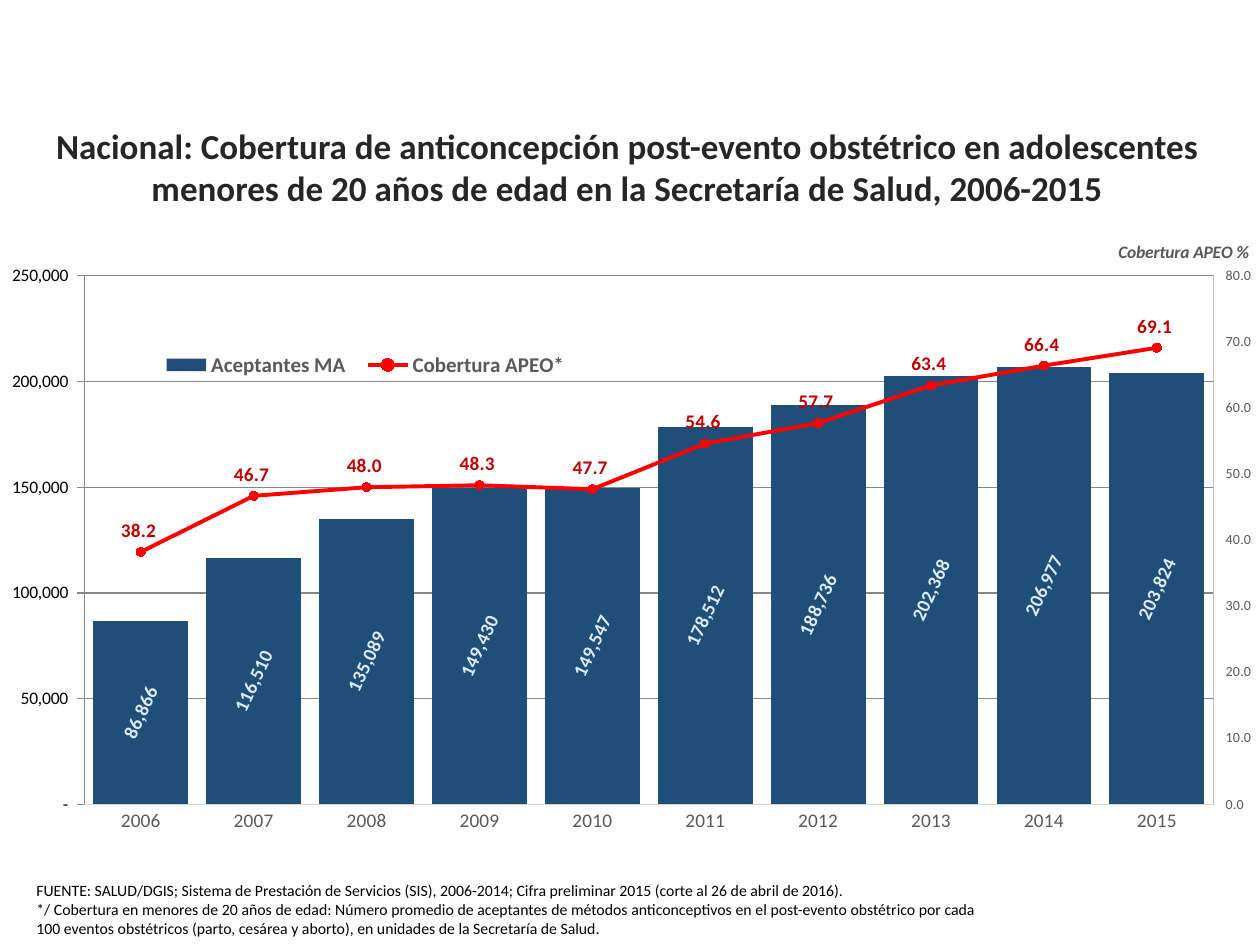
from pptx import Presentation
from pptx.chart.axis import ValueAxis
from pptx.chart.data import CategoryChartData
from pptx.dml.color import RGBColor
from pptx.enum.chart import (XL_CHART_TYPE, XL_LABEL_POSITION, XL_LEGEND_POSITION,
                             XL_MARKER_STYLE, XL_TICK_MARK)
from pptx.enum.text import MSO_ANCHOR, MSO_AUTO_SIZE, PP_ALIGN
from pptx.oxml import parse_xml
from pptx.oxml.ns import nsdecls, qn
from pptx.util import Pt

FONT = "Calibri"
COLORS = {"title": "262626", "note": "000000", "gray": "595959", "axis": "D9D9D9",
          "frame": "BFBFBF", "bar": "1F4E79", "bar_label": "DEEBF7",
          "line": "FF0000", "line_label": "C00000"}
YEARS = [str(year) for year in range(2006, 2016)]
ACCEPTERS = [86866, 116510, 135089, 149430, 149547, 178512, 188736, 202368, 206977, 203824]
COVERAGE = [38.2, 46.7, 48.0, 48.3, 47.7, 54.6, 57.7, 63.4, 66.4, 69.1]
COUNT_FORMAT = '_(* #,##0_);_(* \\(#,##0\\);_(* "-"_);_(@_)'
PERCENT_FORMAT = "0.0_ ;\\-0.0\\ "
TITLE = ("Nacional: Cobertura de anticoncepción post-evento obstétrico en adolescentes "
         "menores de 20 años de edad en la Secretaría de Salud, 2006-2015")
NOTES = ("FUENTE: SALUD/DGIS; Sistema de Prestación de Servicios (SIS), 2006-2014; "
         "Cifra preliminar 2015 (corte al 26 de abril de 2016).\n"
         "*/ Cobertura en menores de 20 años de edad: Número promedio de aceptantes de métodos "
         "anticonceptivos en el post-evento obstétrico por cada 100 eventos obstétricos "
         "(parto, cesárea y aborto), en unidades de la Secretaría de Salud.")


def rgb(name):
    """Return the named palette color."""
    return RGBColor.from_string(COLORS[name])


def format_font(font, size, color, bold=False, italic=False):
    """Apply typeface, size, color and emphasis to a font."""
    font.name, font.size, font.bold, font.italic = FONT, Pt(size), bold, italic
    font.color.rgb = rgb(color)


def write_text(frame, text, align=PP_ALIGN.LEFT, **style):
    """Write text into a frame, one paragraph per line."""
    frame.text = text
    for paragraph in frame.paragraphs:
        paragraph.alignment = align
        for run in paragraph.runs:
            format_font(run.font, **style)


def place(shape, left, top, width, height):
    """Position a shape and let it grow with its text."""
    shape.left, shape.top, shape.width, shape.height = map(Pt, (left, top, width, height))
    shape.text_frame.word_wrap = True
    shape.text_frame.auto_size = MSO_AUTO_SIZE.SHAPE_TO_FIT_TEXT


def set_layout(element, x, y, width=None, height=None):
    """Give a chart part a manual layout in fractions of the chart."""
    for old in element.findall(qn("c:layout")):
        element.remove(old)
    target = '<c:layoutTarget val="inner"/>' if element.tag == qn("c:plotArea") else ""
    size = f'<c:w val="{width}"/><c:h val="{height}"/>' if width else ""
    layout = parse_xml(
        f'<c:layout {nsdecls("c")}><c:manualLayout>{target}<c:xMode val="edge"/>'
        f'<c:yMode val="edge"/><c:x val="{x}"/><c:y val="{y}"/>{size}'
        '</c:manualLayout></c:layout>')
    overlay = element.find(qn("c:overlay"))
    if overlay is None:
        element.insert(0, layout)
    else:
        overlay.addprevious(layout)


def move_to_second_axis(chart):
    """Turn the last column series into a line on a right-hand axis."""
    plot_area = chart.plots[0]._element.getparent()
    bar_chart = plot_area.find(qn("c:barChart"))
    series = bar_chart.findall(qn("c:ser"))[-1]
    for flag in series.findall(qn("c:invertIfNegative")):
        series.remove(flag)
    line_chart = parse_xml(
        f'<c:lineChart {nsdecls("c")}><c:grouping val="standard"/><c:varyColors val="0"/>'
        '<c:marker val="1"/><c:axId val="5001"/><c:axId val="5002"/></c:lineChart>')
    line_chart.insert(2, series)
    bar_chart.addnext(line_chart)
    last_axis = plot_area.find(qn("c:valAx"))
    axes = (("valAx", 5002, 5001, 0, "r", "max"), ("catAx", 5001, 5002, 1, "b", "autoZero"))
    for tag, own, other, deleted, side, crosses in axes:
        axis = parse_xml(
            f'<c:{tag} {nsdecls("c")}><c:axId val="{own}"/><c:scaling>'
            f'<c:orientation val="minMax"/></c:scaling><c:delete val="{deleted}"/>'
            f'<c:axPos val="{side}"/><c:majorTickMark val="out"/><c:minorTickMark val="none"/>'
            f'<c:tickLblPos val="nextTo"/><c:crossAx val="{other}"/>'
            f'<c:crosses val="{crosses}"/></c:{tag}>')
        last_axis.addnext(axis)
        last_axis = axis
    return ValueAxis(plot_area.findall(qn("c:valAx"))[1])


def format_value_axis(axis, title, position, maximum, unit, number_format, tick):
    """Set scale, labels and a horizontal title above a value axis."""
    axis.minimum_scale, axis.maximum_scale, axis.major_unit = 0, maximum, unit
    axis.has_major_gridlines = False
    axis.major_tick_mark = tick
    axis.tick_labels.number_format = number_format
    axis.tick_labels.number_format_is_linked = False
    format_font(axis.tick_labels.font, 8, "gray")
    axis.format.line.fill.background()
    frame = axis.axis_title.text_frame
    write_text(frame, title, size=10, color="gray", bold=True, italic=True)
    frame._txBody.find(qn("a:bodyPr")).set("rot", "0")
    set_layout(axis.axis_title._element, *position)


def label_series(series, color, number_format, position, rotation=0):
    """Show the values of a series as bold labels."""
    labels = series.data_labels
    labels.show_value = True
    labels.number_format, labels.number_format_is_linked = number_format, False
    labels.position = position
    format_font(labels.font, 11, color, bold=True)
    body = labels._element.find(qn("c:txPr")).find(qn("a:bodyPr"))
    body.set("rot", str(rotation * 60000))


def add_coverage_chart(slide):
    """Add the columns of accepters with the coverage line."""
    data = CategoryChartData()
    data.categories = YEARS
    data.add_series("Aceptantes MA", ACCEPTERS, COUNT_FORMAT)
    data.add_series("Cobertura APEO*", COVERAGE, PERCENT_FORMAT)
    chart = slide.shapes.add_chart(XL_CHART_TYPE.COLUMN_CLUSTERED, Pt(0), Pt(126.7),
                                   Pt(720), Pt(363.6), data).chart
    chart.has_title = False
    format_font(chart.font, 10, "note")
    right_axis = move_to_second_axis(chart)
    format_value_axis(chart.value_axis, "Total Aceptantes", (0, 0.02), 250000, 50000,
                      COUNT_FORMAT, XL_TICK_MARK.NONE)
    format_value_axis(right_axis, "Cobertura APEO %", (0.885, 0.025), 80, 10,
                      "0.0", XL_TICK_MARK.OUTSIDE)

    years = chart.category_axis
    years.major_tick_mark = XL_TICK_MARK.NONE
    format_font(years.tick_labels.font, 11, "gray")
    years.format.line.color.rgb = rgb("axis")
    years.format.line.width = Pt(0.75)

    columns, lines = chart.plots
    columns.gap_width = 19
    columns.vary_by_categories = False
    bars, coverage = columns.series[0], lines.series[0]
    bars.format.fill.solid()
    bars.format.fill.fore_color.rgb = rgb("bar")
    label_series(bars, "bar_label", COUNT_FORMAT, XL_LABEL_POSITION.CENTER, -65)

    coverage.smooth = False
    coverage.format.line.color.rgb = rgb("line")
    coverage.format.line.width = Pt(2.25)
    coverage.marker.style, coverage.marker.size = XL_MARKER_STYLE.CIRCLE, 5
    coverage.marker.format.fill.solid()
    coverage.marker.format.fill.fore_color.rgb = rgb("line")
    coverage.marker.format.line.color.rgb = rgb("line")
    label_series(coverage, "line_label", PERCENT_FORMAT, XL_LABEL_POSITION.ABOVE)

    chart.has_legend = True
    chart.legend.position = XL_LEGEND_POSITION.BOTTOM
    chart.legend.include_in_layout = False
    format_font(chart.legend.font, 12, "gray", bold=True)
    set_layout(chart.legend._element, 0.12, 0.19, 0.34, 0.07)

    plot_area = columns._element.getparent()
    set_layout(plot_area, 0.067, 0.085, 0.896, 0.831)
    plot_area.append(parse_xml(
        f'<c:spPr {nsdecls("c", "a")}><a:noFill/><a:ln w="{Pt(0.75)}"><a:solidFill>'
        f'<a:srgbClr val="{COLORS["frame"]}"/></a:solidFill></a:ln></c:spPr>'))


def main():
    """Build and save the coverage slide."""
    presentation = Presentation()
    presentation.slide_width, presentation.slide_height = Pt(720), Pt(540)
    slide = presentation.slides.add_slide(presentation.slide_layouts[5])
    title = slide.shapes.title
    place(title, 15, 67.7, 687, 55.4)
    title.text_frame.vertical_anchor = MSO_ANCHOR.MIDDLE
    write_text(title.text_frame, TITLE, PP_ALIGN.CENTER, size=20, color="title", bold=True)
    notes = slide.shapes.add_textbox(0, 0, 0, 0)
    place(notes, 13.7, 499.7, 550, 40.3)
    write_text(notes.text_frame, NOTES, PP_ALIGN.JUSTIFY, size=9, color="note")
    add_coverage_chart(slide)
    presentation.save("out.pptx")


if __name__ == "__main__":
    main()
